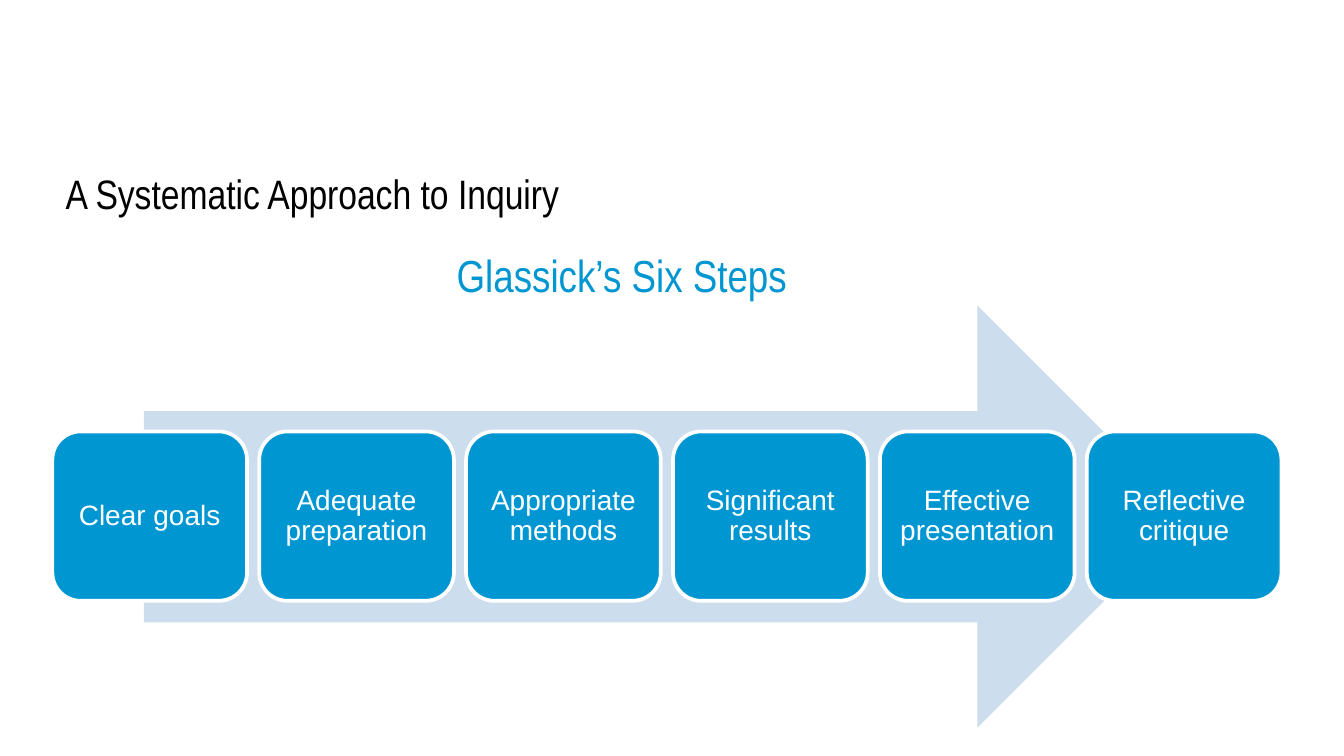
from dataclasses import dataclass

from lxml import etree
from pptx import Presentation
from pptx.dml.color import RGBColor
from pptx.enum.shapes import MSO_SHAPE
from pptx.enum.text import MSO_ANCHOR, MSO_AUTO_SIZE, PP_ALIGN
from pptx.oxml.ns import qn
from pptx.util import Cm, Pt

ARROW, ROUNDED = MSO_SHAPE.RIGHT_ARROW, MSO_SHAPE.ROUNDED_RECTANGLE
TOP, MIDDLE = MSO_ANCHOR.TOP, MSO_ANCHOR.MIDDLE
LEFT, CENTER = PP_ALIGN.LEFT, PP_ALIGN.CENTER
NO_AUTOFIT = MSO_AUTO_SIZE.NONE
TITLE_AND_CONTENT = 1


@dataclass(frozen=True)
class Theme:
    black: RGBColor = RGBColor(0x00, 0x00, 0x00)
    white: RGBColor = RGBColor(0xFF, 0xFF, 0xFF)
    blue: RGBColor = RGBColor(0x00, 0x96, 0xD2)
    pale_blue: RGBColor = RGBColor(0xCC, 0xDD, 0xEE)
    heading_font: str = "Arial Narrow"
    step_font: str = "Arial"
    title_size: int = 22
    subtitle_size: int = 24
    step_size: int = 15
    outline: int = 2


class SlideBuilder:
    def __init__(self, slide, theme):
        self.slide = slide
        self.theme = theme

    def set_text(self, shape, text, font, size, color, align, anchor, margins):
        """Put one formatted paragraph into a shape."""
        frame = shape.text_frame
        frame_format = {
            "word_wrap": True, "auto_size": NO_AUTOFIT, "vertical_anchor": anchor,
            "margin_left": margins[0], "margin_right": margins[0],
            "margin_top": margins[1], "margin_bottom": margins[1],
        }
        for name, value in frame_format.items():
            setattr(frame, name, value)
        frame.text = text
        paragraph = frame.paragraphs[0]
        properties = paragraph._p.get_or_add_pPr()
        properties.set("marL", "0")
        properties.set("indent", "0")
        etree.SubElement(properties, qn("a:buNone"))
        paragraph_format = {"alignment": align, "line_spacing": 0.9, "space_before": Pt(0)}
        for name, value in paragraph_format.items():
            setattr(paragraph, name, value)
        for name, value in {"name": font, "size": Pt(size), "bold": False}.items():
            setattr(paragraph.font, name, value)
        paragraph.font.color.rgb = color

    def heading(self, placeholder, text, box, size, color):
        """Move and fill a template placeholder."""
        for name, value in zip(("left", "top", "width", "height"), box):
            setattr(placeholder, name, Cm(value))
        self.set_text(placeholder, text, self.theme.heading_font, size, color,
                      LEFT, TOP, (Cm(0.25), Cm(0.13)))

    def shape(self, kind, box, fill):
        shape = self.slide.shapes.add_shape(kind, *map(Cm, box))
        shape.shadow.inherit = False
        shape.fill.solid()
        shape.fill.fore_color.rgb = fill
        shape.line.fill.background()
        return shape

    def step(self, text, box):
        """Add a rounded box with a white outline and centred text."""
        theme = self.theme
        card = self.shape(ROUNDED, box, theme.blue)
        card.line.color.rgb = theme.white
        card.line.width = Pt(theme.outline)
        self.set_text(card, text, theme.step_font, theme.step_size, theme.white,
                      CENTER, MIDDLE, (Cm(0.16), Cm(0.16)))


def main():
    theme = Theme()
    deck = Presentation()
    deck.slide_width, deck.slide_height = Cm(25.4), Cm(14.28)
    slide = deck.slides.add_slide(deck.slide_layouts[TITLE_AND_CONTENT])
    builder = SlideBuilder(slide, theme)

    # Headings
    builder.heading(slide.shapes.title, "A Systematic Approach to Inquiry",
                    (0.99, 3.15, 10.11, 1.3), theme.title_size, theme.black)
    builder.heading(slide.placeholders[1], "Glassick’s Six Steps",
                    (8.38, 4.67, 10.11, 0.91), theme.subtitle_size, theme.blue)

    # Process arrow behind the steps
    builder.shape(ARROW, (2.72, 5.77, 19.74, 7.98), theme.pale_blue)

    # Six evenly spaced steps
    steps = ("Clear goals", "Adequate preparation", "Appropriate methods",
             "Significant results", "Effective presentation", "Reflective critique")
    first_left, pitch = 0.99, 3.91
    for index, step in enumerate(steps):
        builder.step(step, (first_left + index * pitch, 8.15, 3.68, 3.2))

    deck.save("out.pptx")


if __name__ == "__main__":
    main()
